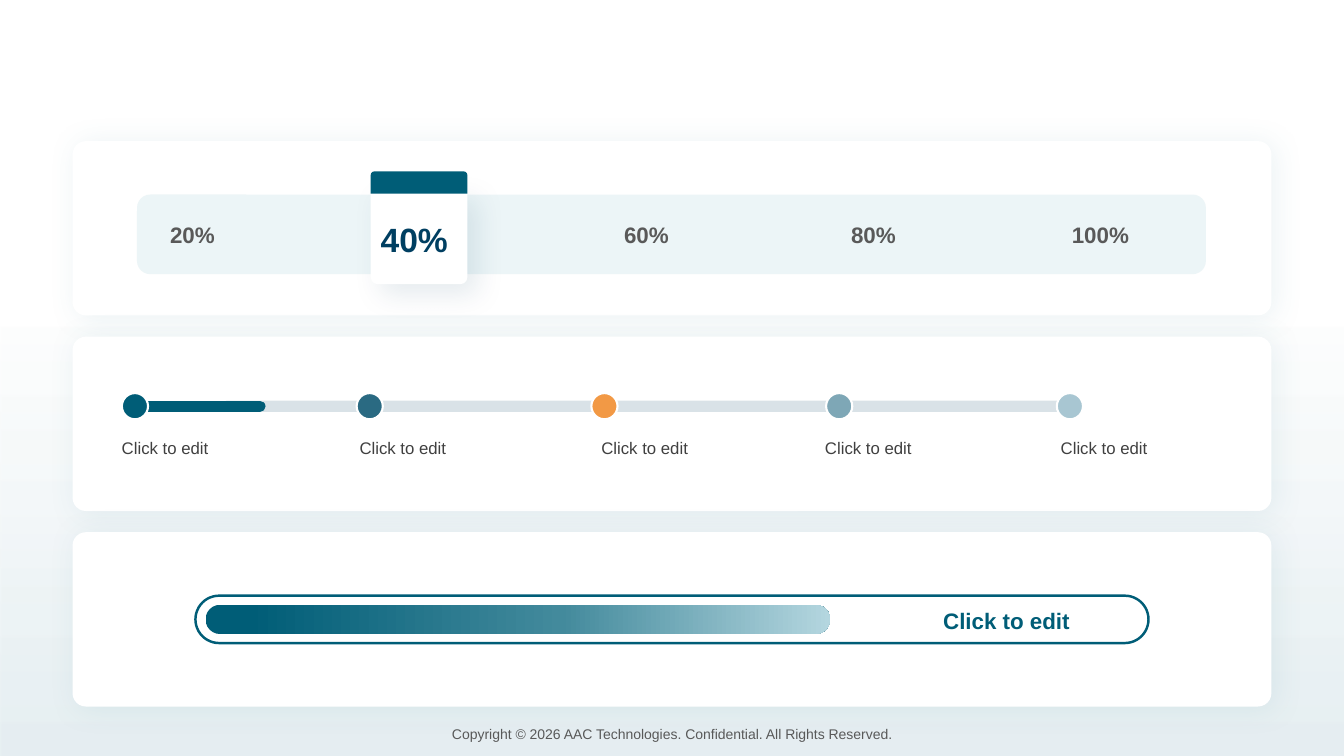
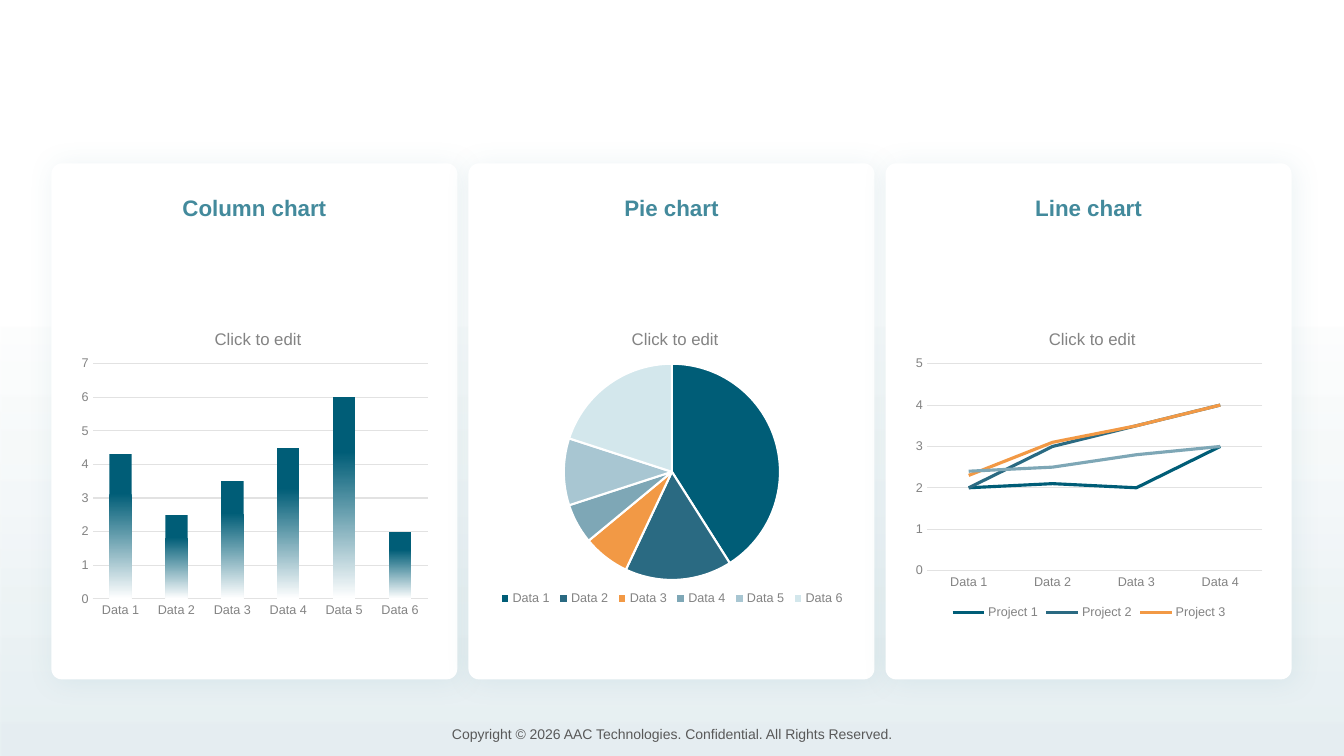
from lxml import etree
from pptx import Presentation
from pptx import util as u
from pptx.chart import data as chartdata
from pptx.dml.color import RGBColor
from pptx.enum import chart as charts, shapes, text
from pptx.oxml.ns import qn

CELL = u.Inches(0.1)          # the slide is a grid of 133.4 columns by 75 rows
COLUMNS, ROWS = 133.4, 75
FONT = "Arial"
HEX = {
    "white": "FFFFFF", "petrol": "005D77", "navy": "003F61", "slate": "2A6A82",
    "teal": "438A9C", "orange": "F29945", "mist": "7EA7B6", "haze": "A8C6D2",
    "ice": "D3E7EC", "sky": "85BCCA", "pale": "B4D6DF", "ink": "404040",
    "gray": "595959", "label": "838383", "grid": "E2E2E2",
}
RGB = {name: RGBColor.from_string(value) for name, value in HEX.items()}
SHAPE = shapes.MSO_SHAPE
LEFT, CENTER = text.PP_ALIGN.LEFT, text.PP_ALIGN.CENTER
TOP, MIDDLE = text.MSO_ANCHOR.TOP, text.MSO_ANCHOR.MIDDLE
EDIT = "Click to edit"


def draw(page, kind, at, fill=None, alpha=None, stops=None, angle=0,
         line=None, shadow=None, corners=()):
    """Draw a preset shape; stops are (percent, colour, alpha percent)."""
    shape = page.shapes.add_shape(kind, *[int(n * CELL) for n in at])
    for index, corner in enumerate(corners):
        shape.adjustments[index] = corner
    props = shape.element.spPr
    if stops:
        shape.fill.gradient()
        shape.fill.gradient_angle = angle
        stop_list = props.find(qn("a:gradFill")).find(qn("a:gsLst"))
        for old in list(stop_list):
            stop_list.remove(old)
        for percent, colour, opacity in stops:
            stop = etree.SubElement(stop_list, qn("a:gs"), pos=str(percent * 1000))
            tone = etree.SubElement(stop, qn("a:srgbClr"), val=HEX[colour])
            etree.SubElement(tone, qn("a:alpha"), val=str(opacity * 1000))
    elif fill:
        shape.fill.solid()
        shape.fill.fore_color.rgb = RGB[fill]
        if alpha:
            tone = props.find(qn("a:solidFill"))[0]
            etree.SubElement(tone, qn("a:alpha"), val=str(alpha * 1000))
    else:
        shape.fill.background()
    if line:
        shape.line.color.rgb, shape.line.width = RGB[line[0]], u.Pt(line[1])
    else:
        shape.line.fill.background()
    shape.shadow.inherit = False
    if shadow:
        colour, opacity, blur, distance, turn = shadow
        outer = etree.SubElement(
            props.find(qn("a:effectLst")), qn("a:outerShdw"),
            blurRad=str(u.Pt(blur)), dist=str(u.Pt(distance)),
            dir=str(turn * 60000), algn="ctr", rotWithShape="0")
        tone = etree.SubElement(outer, qn("a:srgbClr"), val=HEX[colour])
        etree.SubElement(tone, qn("a:alpha"), val=str(opacity * 1000))
    return shape


def write(page, at, words, size, colour, bold=False, align=CENTER, anchor=TOP):
    box = page.shapes.add_textbox(*[int(n * CELL) for n in at])
    frame = box.text_frame
    frame.word_wrap, frame.vertical_anchor = True, anchor
    para = frame.paragraphs[0]
    para.alignment = align
    span = para.add_run()
    span.text = words
    look = {"name": FONT, "size": u.Pt(size), "bold": bold}
    for key, value in look.items():
        setattr(span.font, key, value)
    span.font.color.rgb = RGB[colour]
    return box


deck = Presentation()
deck.slide_width, deck.slide_height = int(COLUMNS * CELL), int(ROWS * CELL)
layout = deck.slide_layouts[6]
progress, graphs = [deck.slides.add_slide(layout) for _ in range(2)]

# Shared tint and footer, moved to the layout
tint = draw(progress, SHAPE.RECTANGLE, (0, 0, COLUMNS, ROWS), angle=270,
            stops=[(0, "petrol", 10), (58, "petrol", 0)])
tint.rotation = 180
footer = write(progress, (31.2, 71.5, 71, 2.7),
               "Copyright © 2026 AAC Technologies. Confidential. All Rights Reserved.",
               10, "gray")
for part in (tint, footer):
    layout.shapes.element.append(part.element)

# Slide 1: three wide cards
CARD_SHADOW = ("teal", 10, 20, 3, 36)
for row in range(3):
    draw(progress, SHAPE.ROUNDED_RECTANGLE, (7.2, 14 + 19.4 * row, 119, 17.3),
         "white", shadow=CARD_SHADOW, corners=[0.077])

# Timeline with five stages
for start, end, colour, alpha in ((22.5, 104.9, "navy", 15),
                                  (14.7, 25.8, "petrol", 100)):
    track = progress.shapes.add_connector(
        shapes.MSO_CONNECTOR.STRAIGHT,
        *[int(n * CELL) for n in (start, 40.3, end, 40.3)])
    track.line.color.rgb, track.line.width = RGB[colour], u.Pt(8)
    outline = track.element.spPr.find(qn("a:ln"))
    outline.set("cap", "rnd")
    tone = next(outline.iter(qn("a:srgbClr")))
    etree.SubElement(tone, qn("a:alpha"), val=str(alpha * 1000))
    etree.SubElement(track.element.spPr, qn("a:effectLst"))
for dot_left, label_left, colour in (
        (12.1, 11.1, "petrol"), (35.4, 34.7, "slate"), (58.7, 58.7, "orange"),
        (82, 80.9, "mist"), (104.9, 104.3, "haze")):
    draw(progress, SHAPE.OVAL, (dot_left, 39, 2.6, 2.6), colour,
         line=("white", 1.5))
    write(progress, (label_left, 42.9, 19.2, 4.1), EDIT, 12, "ink", align=LEFT)

# Percentage band with the current step raised
draw(progress, SHAPE.ROUNDED_RECTANGLE, (13.6, 19.3, 106.1, 7.9), "sky", alpha=15)
draw(progress, SHAPE.ROUND_2_SAME_RECTANGLE, (36.8, 18.8, 9.6, 9.4), "white",
     shadow=("navy", 10, 20, 10, 45), corners=[0, 0.075])
draw(progress, SHAPE.ROUND_2_SAME_RECTANGLE, (36.8, 17, 9.6, 2.2), "petrol")
for step in range(5):
    words = f"{20 * (step + 1)}%"
    if step == 1:
        write(progress, (36.8, 20.8, 9.6, 5.8), words, 24, "navy", True, LEFT, MIDDLE)
    else:
        write(progress, (13.9 + 22.53 * step, 21.2, 10.4, 4.1), words, 16,
              "gray", True, anchor=MIDDLE)

# Progress bar
draw(progress, SHAPE.ROUNDED_RECTANGLE, (19.4, 59.1, 94.6, 4.7),
     line=("petrol", 1.75), corners=[0.5])
draw(progress, SHAPE.ROUNDED_RECTANGLE, (20.4, 60, 62, 2.9), corners=[0.5],
     stops=[(7, "petrol", 100), (57, "teal", 100), (100, "pale", 100)])
write(progress, (89, 59.7, 21.8, 3.7), EDIT, 16, "petrol", True)

# Slide 2: three chart cards
PITCH = 41.4
PALETTE = ["petrol", "slate", "orange", "mist", "haze", "ice"]
KIND = charts.XL_CHART_TYPE
# heading, type, categories, series, axis top, plot area as shares of the chart
panels = [
    ("Column chart", KIND.COLUMN_CLUSTERED, 6,
     {"Series 1": [4.3, 2.5, 3.5, 4.5, 6, 2]}, 7, (0.05, 0.17, 0.93, 0.75)),
    ("Pie chart", KIND.PIE, 6,
     {"Series 1": [41, 16, 7, 6, 10, 20]}, None, (0.2, 0.17, 0.6, 0.69)),
    ("Line chart", KIND.LINE, 4,
     {"Project 1": [2, 2.1, 2, 3], "Project 2": [2, 3, 3.5, 4],
      "Project 3": [2.3, 3.1, 3.5, 4], "Project 4": [2.4, 2.5, 2.8, 3]},
     5, (0.05, 0.17, 0.93, 0.66)),
]
for index, (heading, kind, count, rows, top, plot_at) in enumerate(panels):
    shift = PITCH * index
    draw(graphs, SHAPE.ROUNDED_RECTANGLE, (5.1 + shift, 16.2, 40.3, 51.2),
         "white", shadow=CARD_SHADOW, corners=[0.026])
    write(graphs, (11.9 + shift, 18.8, 26.7, 3.7), heading, 16, "teal", True)

    data = chartdata.CategoryChartData()
    data.categories = [f"Data {n + 1}" for n in range(count)]
    for name, values in rows.items():
        data.add_series(name, values)
    place = [int(n * CELL) for n in (7.4 + shift, 30.8, 35.8, 31.1)]
    chart = graphs.shapes.add_chart(kind, *place, data).chart
    body = chart.element.find(qn("c:chart"))
    chart.font.name, chart.font.size = FONT, u.Pt(9)
    chart.font.color.rgb = RGB["label"]
    chart.has_title = True
    frame = chart.chart_title.text_frame
    frame.text = EDIT
    title_font = frame.paragraphs[0].runs[0].font
    for key, value in {"name": FONT, "size": u.Pt(12), "bold": False}.items():
        setattr(title_font, key, value)
    title_font.color.rgb = RGB["label"]

    # Axes and legend
    if top:
        chart.value_axis.minimum_scale, chart.value_axis.maximum_scale = 0, top
        chart.value_axis.major_unit = 1
        gridline = chart.value_axis.major_gridlines.format.line
        for rule in (gridline, chart.category_axis.format.line):
            rule.color.rgb, rule.width = RGB["grid"], u.Pt(0.75)
        chart.value_axis.format.line.fill.background()
        for axis in (chart.category_axis, chart.value_axis):
            axis.major_tick_mark = charts.XL_TICK_MARK.NONE
    chart.has_legend = kind != KIND.COLUMN_CLUSTERED
    if chart.has_legend:
        chart.legend.position = charts.XL_LEGEND_POSITION.BOTTOM
        chart.legend.include_in_layout = False

    # Series colours
    plot = chart.plots[0]
    plot.vary_by_categories = kind == KIND.PIE
    if kind == KIND.COLUMN_CLUSTERED:
        plot.gap_width = 150
        fill = plot.series[0].format.fill
        fill.gradient()
        fill.gradient_angle = 270
        for stop, position, colour in zip(fill.gradient_stops, (0.27, 1),
                                          ("petrol", "white")):
            stop.position, stop.color.rgb = position, RGB[colour]
    elif kind == KIND.PIE:
        for number, colour in enumerate(PALETTE):
            part = plot.series[0].points[number].format
            part.fill.solid()
            part.fill.fore_color.rgb = RGB[colour]
            part.line.color.rgb, part.line.width = RGB["white"], u.Pt(1.5)
    else:
        for series, colour in zip(plot.series, PALETTE):
            series.smooth = False
            series.marker.style = charts.XL_MARKER_STYLE.NONE
            line = series.format.line
            line.color.rgb, line.width = RGB[colour], u.Pt(2.25)
        # The fourth project has no legend entry
        entry = etree.Element(qn("c:legendEntry"))
        etree.SubElement(entry, qn("c:idx"), val="3")
        etree.SubElement(entry, qn("c:delete"), val="1")
        body.find(qn("c:legend")).find(qn("c:legendPos")).addnext(entry)

    # Fixed places inside the chart
    plot_area = body.find(qn("c:plotArea"))
    places = [(body.find(qn("c:title")), (0.38, 0.05)), (plot_area, plot_at)]
    if kind == KIND.PIE:
        places.append((body.find(qn("c:legend")), (0.01, 0.88, 0.98, 0.08)))
    for part, shares in places:
        for old in part.findall(qn("c:layout")):
            part.remove(old)
        area = etree.Element(qn("c:layout"))
        manual = etree.SubElement(area, qn("c:manualLayout"))
        if part is plot_area:
            etree.SubElement(manual, qn("c:layoutTarget"), val="inner")
        for side in "xy":
            etree.SubElement(manual, qn(f"c:{side}Mode"), val="edge")
        for side, share in zip("xywh", shares):
            etree.SubElement(manual, qn(f"c:{side}"), val=str(share))
        overlay = part.find(qn("c:overlay"))
        (part[0] if overlay is None else overlay).addprevious(area)

deck.save("out.pptx")
